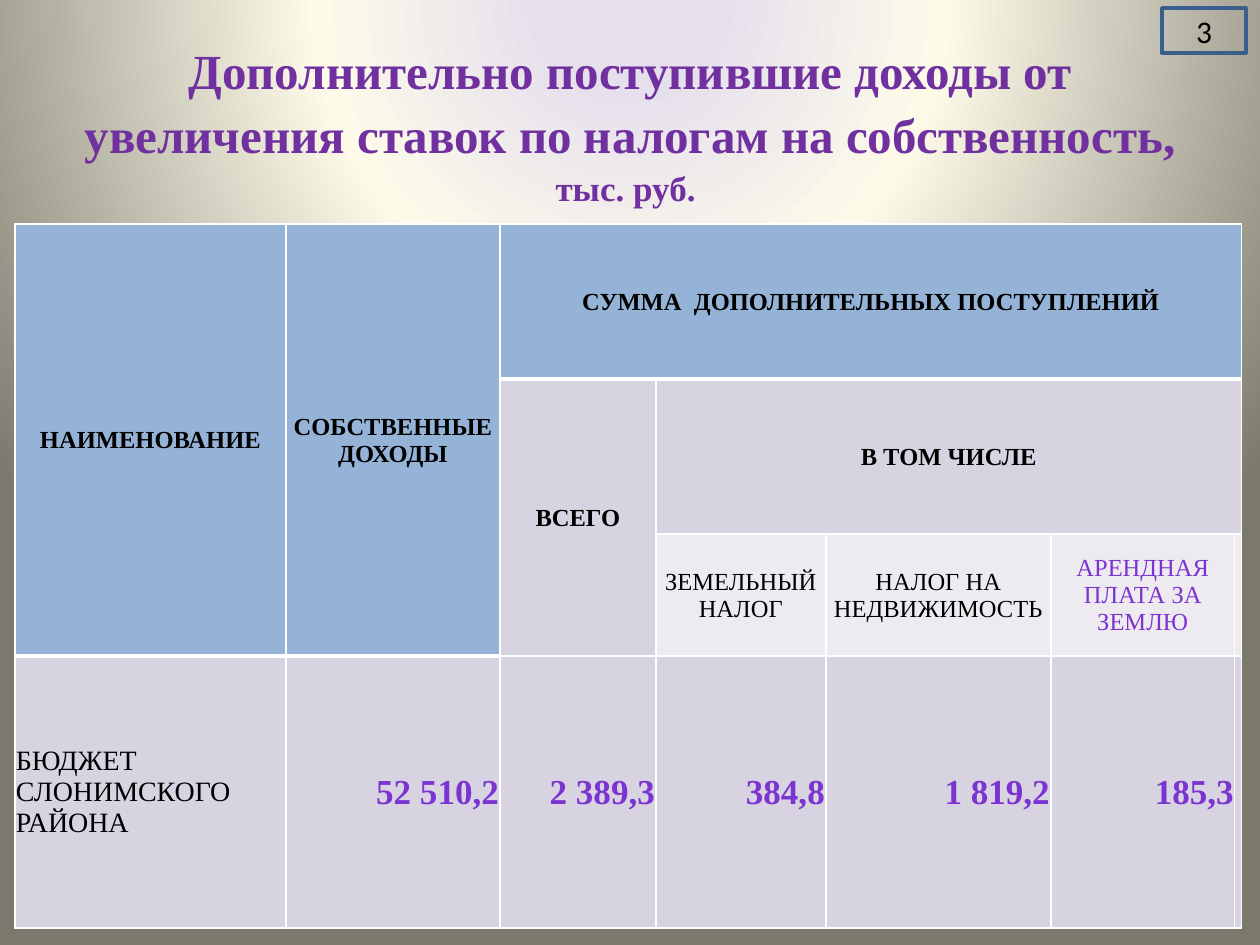
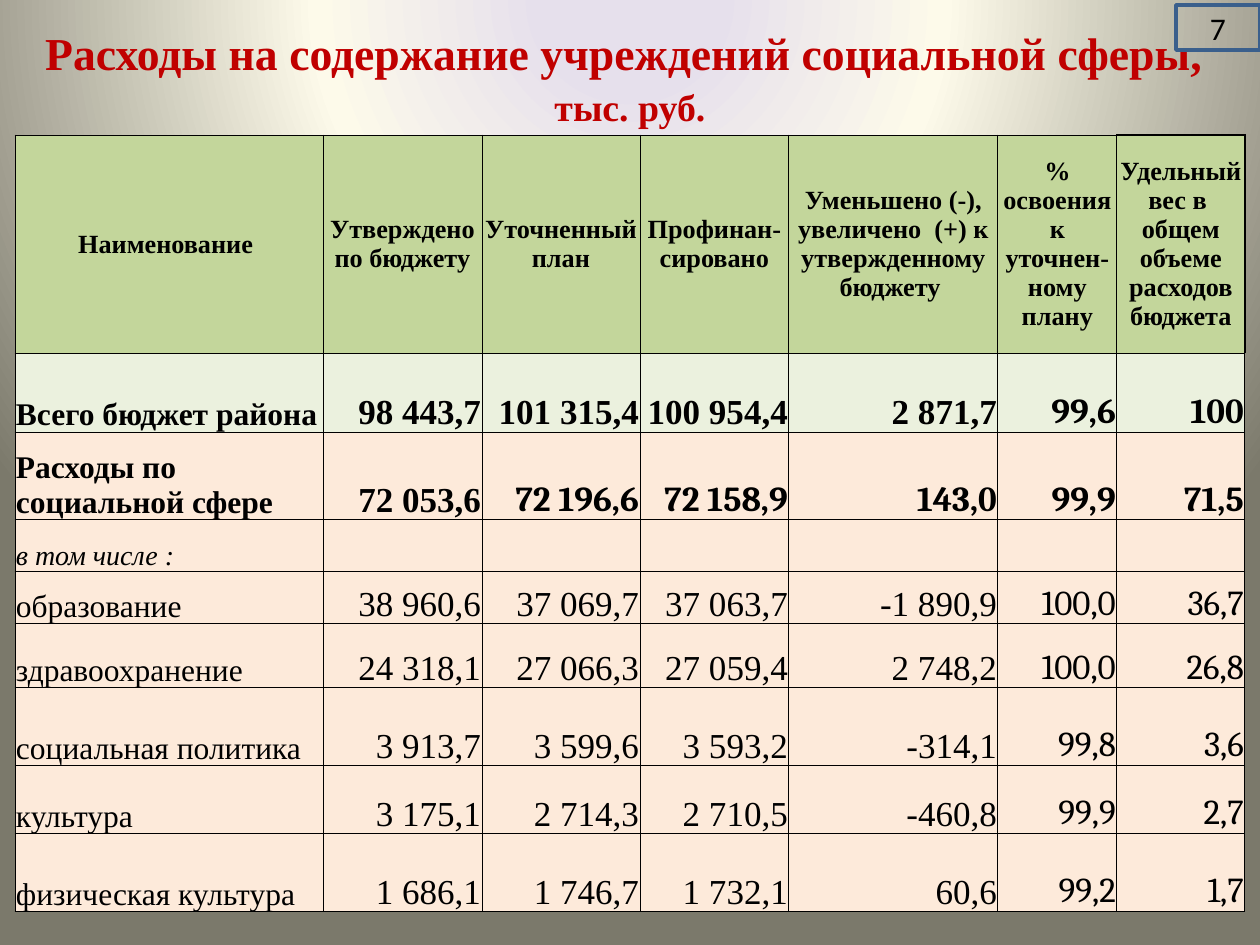
import pptx
import pptx.util
import pptx.dml.color
import pptx.enum.shapes
import pptx.enum.text
import pptx.oxml
import pptx.oxml.ns

PX = 914400 // 126
SERIF, CAMBRIA, SANS = "Times New Roman", "Cambria", "Calibri"
BLACK, WHITE, VIOLET, PURPLE, RED = "000000", "FFFFFF", "7B34D2", "7030A0", "C00000"
BLUE, MAUVE, PALE, FRAME = "95B3D7", "D8D3E0", "EDEAF0", "3A5F8C"
GREEN, MINT, PEACH = "C3D69B", "EBF1DE", "FDEADA"
STOPS = [(11, "E6E0EC"), (40, "FDFAEA"), (100, "7B796B")]

ALIGN = pptx.enum.text.PP_ALIGN
ANCHOR = pptx.enum.text.MSO_ANCHOR

TAX = {
    "title": [("Дополнительно поступившие доходы от увеличения ставок по налогам на собственность, ", 28),
              ("тыс. руб. ", 20)],
    "color": PURPLE, "box": (63, 29, 1134, 186), "anchor": ANCHOR.MIDDLE,
    "number": "3", "badge": (1162, 8),
    "place": (15, 224),
    "cols": [271, 214, 156, 170, 225, 184, 6],
    "rows": [155, 155, 122, 272],
}
TAX_HEADS = [
    (0, 0, 3, 1, "НАИМЕНОВАНИЕ"),
    (0, 1, 3, 1, "СОБСТВЕННЫЕ ДОХОДЫ"),
    (0, 2, 1, 5, "СУММА  ДОПОЛНИТЕЛЬНЫХ ПОСТУПЛЕНИЙ"),
    (1, 2, 2, 1, "ВСЕГО"),
    (1, 3, 1, 4, "В ТОМ ЧИСЛЕ"),
    (2, 3, 1, 1, "ЗЕМЕЛЬНЫЙ НАЛОГ"),
    (2, 4, 1, 1, "НАЛОГ НА НЕДВИЖИМОСТЬ"),
    (2, 5, 1, 1, "АРЕНДНАЯ ПЛАТА ЗА ЗЕМЛЮ"),
]
TAX_ROW = ["БЮДЖЕТ СЛОНИМСКОГО РАЙОНА", "52 510,2", "2 389,3", "384,8", "1 819,2", "185,3"]

COSTS = {
    "title": [("Расходы на содержание учреждений социальной сферы, \n", 26.1), ("тыс. руб.", 21.6)],
    "color": RED, "box": (0, 16, 1260, 119), "anchor": ANCHOR.BOTTOM,
    "number": "7", "badge": (1176, 5),
    "place": (15, 135),
    "cols": [308, 159, 158, 149, 209, 119, 128],
    "rows": [218, 79, 88, 52, 52, 64, 78, 68, 78],
}
COST_ROWS = [
    ["Наименование ", "Утверждено по бюджету", "Уточненный план", "Профинан-сировано",
     "Уменьшено (-), увеличено  (+) к утвержденному бюджету ",
     "% освоения к уточнен-\nному плану", "Удельный вес в  общем объеме расходов бюджета"],
    ["Всего бюджет района", "98 443,7", "101 315,4", "100 954,4", "2 871,7", "99,6", "100"],
    ["Расходы по социальной сфере", "72 053,6", "72 196,6", "72 158,9", "143,0", "99,9", "71,5"],
    ["в том числе :", "", "", "", "", "", ""],
    ["образование", "38 960,6", "37 069,7", "37 063,7", "-1 890,9", "100,0", "36,7"],
    ["здравоохранение", "24 318,1", "27 066,3", "27 059,4", "2 748,2", "100,0", "26,8"],
    ["социальная политика", "3 913,7", "3 599,6", "3 593,2", "-314,1", "99,8", "3,6"],
    ["культура", "3 175,1", "2 714,3", "2 710,5", "-460,8", "99,9", "2,7"],
    ["физическая культура", "1 686,1", "1 746,7", "1 732,1", "60,6", "99,2", "1,7"],
]


def rgb(code):
    return pptx.dml.color.RGBColor.from_string(code)


def scale(*sizes):
    return [size * PX for size in sizes]


def add_run(para, text, size, color, font=SERIF, bold=False, italic=False):
    run = para.add_run()
    run.text = text
    run.font.size = pptx.util.Pt(size)
    run.font.name = font
    run.font.bold = bold
    run.font.italic = italic
    run.font.color.rgb = rgb(color)


def paint_back(master):
    master.background.fill.solid()
    back = master.element.find(".//" + pptx.oxml.ns.qn("p:bgPr"))
    back.remove(back[0])
    stops = "".join(f'<a:gs pos="{pos * 1000}"><a:srgbClr val="{code}"/></a:gs>' for pos, code in STOPS)
    back.insert(0, pptx.oxml.parse_xml(
        f'<a:gradFill rotWithShape="1" {pptx.oxml.ns.nsdecls("a")}><a:gsLst>{stops}</a:gsLst>'
        '<a:path path="circle"><a:fillToRect l="50000" t="-80000" r="50000" b="180000"/></a:path>'
        '</a:gradFill>'))


def add_page(deck, page):
    slide = deck.slides.add_slide(deck.slide_layouts[5])
    title = slide.shapes.title
    title.left, title.top, title.width, title.height = scale(*page["box"])
    frame = title.text_frame
    frame.auto_size = pptx.enum.text.MSO_AUTO_SIZE.NONE
    frame.word_wrap = True
    frame.vertical_anchor = page["anchor"]
    para = frame.paragraphs[0]
    para.alignment = ALIGN.CENTER
    para.line_spacing = 1.09
    for text, size in page["title"]:
        add_run(para, text.rstrip("\n"), size, page["color"], bold=True)
        if text.endswith("\n"):
            para.add_line_break()
    return slide


def add_grid(slide, page):
    cols, rows = page["cols"], page["rows"]
    area = scale(*page["place"], sum(cols), sum(rows))
    grid = slide.shapes.add_table(len(rows), len(cols), *area).table
    grid.first_row = grid.horz_banding = False
    for col, width in zip(grid.columns, cols):
        col.width = width * PX
    for row, height in zip(grid.rows, rows):
        row.height = height * PX
    return grid


def style_cell(cell, fill, color, edges):
    cell.fill.solid()
    cell.fill.fore_color.rgb = rgb(fill)
    cell.margin_left = cell.margin_right = cell.margin_top = PX
    cell.margin_bottom = 0
    props = cell._tc.get_or_add_tcPr()
    for spot, (side, width) in enumerate(zip("LRTB", edges)):
        props.insert(spot, pptx.oxml.parse_xml(
            f'<a:ln{side} w="{int(width * 12700)}" {pptx.oxml.ns.nsdecls("a")}>'
            f'<a:solidFill><a:srgbClr val="{color}"/></a:solidFill></a:ln{side}>'))


def write_cell(cell, text, align, anchor, size, color=BLACK, **look):
    cell.vertical_anchor = anchor
    frame = cell.text_frame
    for n, line in enumerate(text.split("\n")):
        para = frame.add_paragraph() if n else frame.paragraphs[0]
        para.alignment = align
        if line:
            add_run(para, line, size, color, **look)


def add_badge(slide, page):
    box = slide.shapes.add_shape(pptx.enum.shapes.MSO_SHAPE.RECTANGLE, *scale(*page["badge"], 84, 45))
    box.shadow.inherit = False
    box.fill.background()
    box.line.color.rgb = rgb(FRAME)
    box.line.width = pptx.util.Pt(2)
    box.text_frame.vertical_anchor = ANCHOR.MIDDLE
    para = box.text_frame.paragraphs[0]
    para.alignment = ALIGN.CENTER
    add_run(para, page["number"], 18, BLACK, SANS)


def fill_tax(grid):
    heavy = {(0, c) for c in range(7)} | {(2, 0), (2, 1)}
    for r in range(4):
        for c in range(7):
            head = r == 0 or (r < 3 and c < 2)
            fill = BLUE if head else PALE if r == 2 and c > 2 else MAUVE
            edges = (1, 1, 3 if (r - 1, c) in heavy else 1, 3 if (r, c) in heavy else 1)
            style_cell(grid.cell(r, c), fill, WHITE, edges)
    for r, c, down, across, text in TAX_HEADS:
        cell = grid.cell(r, c)
        if down * across > 1:
            cell.merge(grid.cell(r + down - 1, c + across - 1))
        color = VIOLET if c == 5 else BLACK
        write_cell(cell, text, ALIGN.CENTER, ANCHOR.MIDDLE, 14, color, bold=r < 2)
    for c, text in enumerate(TAX_ROW):
        align, size, color = (ALIGN.RIGHT, 20, VIOLET) if c else (ALIGN.LEFT, 16, BLACK)
        write_cell(grid.cell(3, c), text, align, ANCHOR.MIDDLE, size, color, bold=c > 0)


def fill_costs(grid):
    for r, row in enumerate(COST_ROWS):
        for c, text in enumerate(row):
            cell = grid.cell(r, c)
            thick = 1.5 if (r, c) == (0, 6) else 0.5
            style_cell(cell, (GREEN, MINT)[r] if r < 2 else PEACH, BLACK, (0.5, thick, thick, 0.5))
            if r == 0:
                write_cell(cell, text, ALIGN.CENTER, ANCHOR.MIDDLE, 15, bold=True)
            elif c == 0:
                align = ALIGN.JUSTIFY if r > 3 else ALIGN.LEFT
                write_cell(cell, text, align, ANCHOR.BOTTOM, 16 if r == 3 else 18,
                           bold=r < 3, italic=r == 3)
            else:
                font = CAMBRIA if c > 4 or (r == 2 and c > 1) else SERIF
                write_cell(cell, text, ALIGN.RIGHT, ANCHOR.BOTTOM, 20, font=font, bold=r < 3)


def main():
    deck = pptx.Presentation()
    deck.slide_width, deck.slide_height = scale(1260, 945)
    paint_back(deck.slide_master)
    for page, fill in ((TAX, fill_tax), (COSTS, fill_costs)):
        slide = add_page(deck, page)
        fill(add_grid(slide, page))
        add_badge(slide, page)
    deck.save("out.pptx")


if __name__ == "__main__":
    main()
